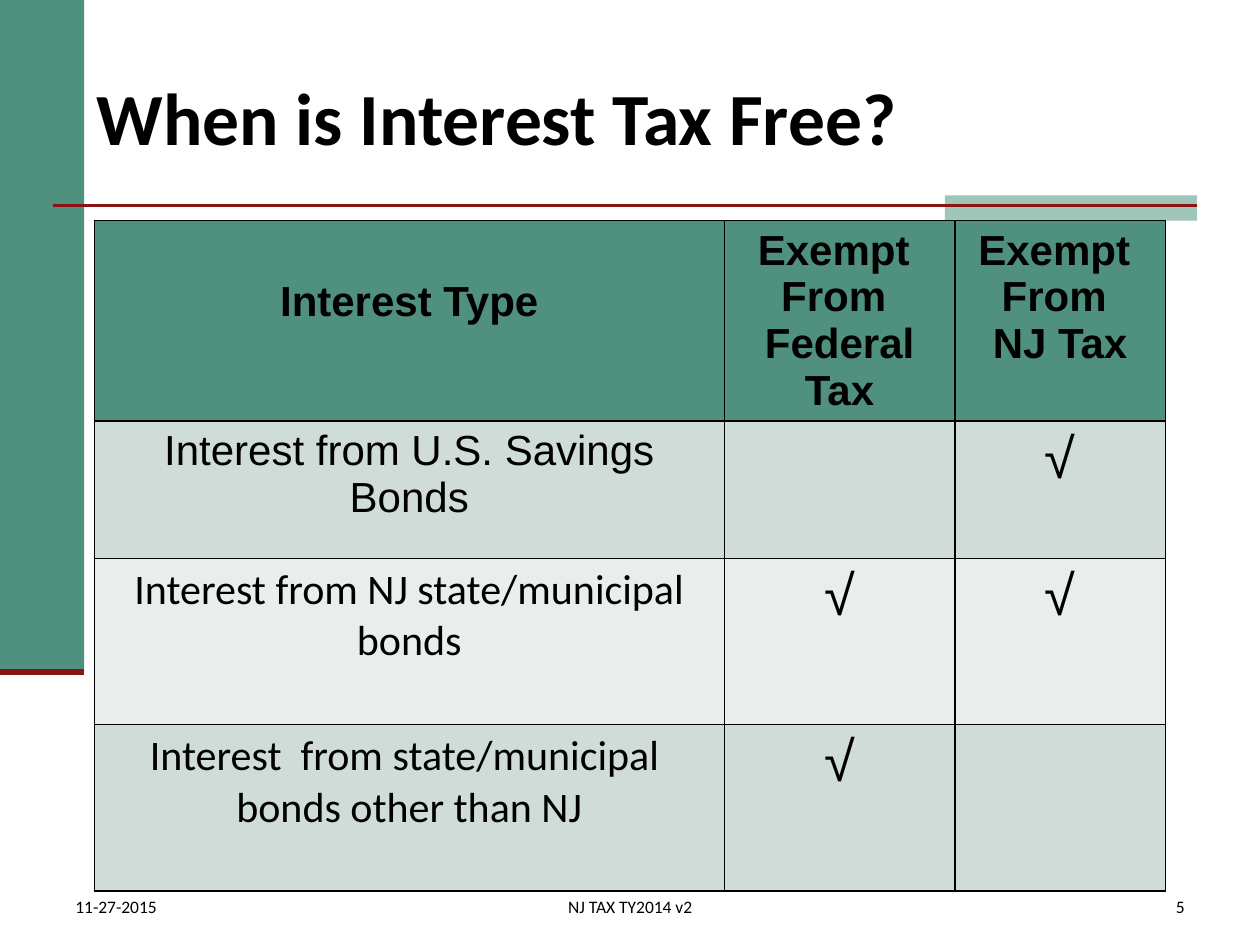
from pptx import Presentation
from pptx.dml.color import RGBColor
from pptx.enum.shapes import MSO_CONNECTOR as Connector, MSO_SHAPE as Shape
from pptx.enum.text import MSO_ANCHOR as Anchor, PP_ALIGN as Align
from pptx.oxml.ns import qn
from pptx.util import Cm, Pt
from lxml.etree import SubElement

GREEN, LIGHT_GREEN, RED, BLACK = "4F917E", "A0C6BA", "891411", "000000"
BANDS = ("D0DCD8", "E9EEEC")
HEADER = {"name": "Arial", "size": Pt(24), "bold": True}
ARIAL = {**HEADER, "bold": False}
CALIBRI = {**ARIAL, "name": "Calibri"}
CHECK = {**ARIAL, "size": Pt(32)}
TITLE = {"name": "Calibri", "size": Pt(42), "bold": True}
FOOTER = {"name": "Calibri", "size": Pt(10), "bold": False}

COLUMNS = (12.7, 4.65, 4.24)
ROWS = (4.04, 2.77, 3.35, 3.35)
HEADINGS = ("Interest Type", "Exempt \nFrom \nFederal Tax", "Exempt \nFrom \nNJ Tax")
INTERESTS = (
    ("Interest from U.S. Savings Bonds", ARIAL, "", "√"),
    ("Interest from NJ state/municipal bonds", CALIBRI, "√", "√"),
    ("Interest  from state/municipal  bonds other than NJ", CALIBRI, "√", ""),
)
FOOTERS = (
    ("11-27-2015", 1.27, 5.51, Align.LEFT),
    ("NJ TAX TY2014 v2", 8.41, 8.59, Align.CENTER),
    ("5", 18.85, 5.28, Align.RIGHT),
)


def color(value):
    """Turn a hex string into a colour."""
    return RGBColor.from_string(value)


def write(frame, text, style, align):
    """Fill a text frame with formatted paragraphs."""
    frame.text = text
    for paragraph in frame.paragraphs:
        paragraph.alignment = align
        for run in paragraph.runs:
            for name, value in style.items():
                setattr(run.font, name, value)
            run.font.color.rgb = color(BLACK)


def add_block(slide, box, fill):
    """Add a plain rectangle without outline."""
    shape = slide.shapes.add_shape(Shape.RECTANGLE, *map(Cm, box))
    shape.shadow.inherit = False
    shape.fill.solid()
    shape.fill.fore_color.rgb = color(fill)
    shape.line.fill.background()


def add_rule(slide, left, right, top, width):
    """Add a horizontal red line."""
    rule = slide.shapes.add_connector(
        Connector.STRAIGHT, Cm(left), Cm(top), Cm(right), Cm(top))
    rule.line.color.rgb = color(RED)
    rule.line.width = Pt(width)
    SubElement(rule._element.spPr, qn("a:effectLst"))


def add_title(slide, text):
    """Place and format the title placeholder."""
    title = slide.shapes.title
    box = {"left": 1.7, "top": 0.76, "width": 22.43, "height": 3.18}
    for name, value in box.items():
        setattr(title, name, Cm(value))
    title.text_frame.vertical_anchor = Anchor.MIDDLE
    write(title.text_frame, text, TITLE, Align.LEFT)


def add_footer(slide, text, left, width, align):
    """Add one small text at the bottom of the slide."""
    frame = slide.shapes.add_textbox(Cm(left), Cm(17.78), Cm(width), Cm(0.84)).text_frame
    frame.word_wrap = True
    frame.vertical_anchor = Anchor.BOTTOM
    write(frame, text, FOOTER, align)


def add_borders(cell):
    """Draw a thin black border on every side of a cell."""
    properties = cell._tc.get_or_add_tcPr()
    for index, side in enumerate(("lnL", "lnR", "lnT", "lnB")):
        line = properties.makeelement(qn(f"a:{side}"), {"w": str(Pt(1))})
        fill = SubElement(line, qn("a:solidFill"))
        SubElement(fill, qn("a:srgbClr"), val=BLACK)
        properties.insert(index, line)


def fill_cell(cell, text, style, fill):
    """Give a table cell its text, fill and borders."""
    if text:
        write(cell.text_frame, text, style, Align.CENTER)
    cell.fill.solid()
    cell.fill.fore_color.rgb = color(fill)
    add_borders(cell)


def add_interest_table(slide):
    """Add the table of exemptions by interest type."""
    table = slide.shapes.add_table(
        len(ROWS), len(COLUMNS), Cm(1.9), Cm(4.45), Cm(sum(COLUMNS)), Cm(sum(ROWS))).table
    table.horz_banding = False
    for column, width in zip(table.columns, COLUMNS):
        column.width = Cm(width)
    for row, height in zip(table.rows, ROWS):
        row.height = Cm(height)
    for index, heading in enumerate(HEADINGS):
        fill_cell(table.cell(0, index), heading, HEADER, GREEN)
    table.cell(0, 0).margin_top = Cm(1.16)
    for row, (interest, style, *checks) in enumerate(INTERESTS, 1):
        fill = BANDS[(row - 1) % 2]
        fill_cell(table.cell(row, 0), interest, style, fill)
        for column, check in enumerate(checks, 1):
            fill_cell(table.cell(row, column), check, CHECK, fill)


def main():
    """Build the slide and save it."""
    presentation = Presentation()
    presentation.slide_width, presentation.slide_height = Cm(25.4), Cm(19.05)
    slide = presentation.slides.add_slide(presentation.slide_layouts[5])
    add_block(slide, (0, 0, 1.7, 13.54), GREEN)
    add_block(slide, (19.05, 3.94, 5.08, 0.51), LIGHT_GREEN)
    add_rule(slide, 1.06, 24.13, 4.14, 1.5)
    add_rule(slide, 0, 1.7, 13.54, 3.5)
    add_title(slide, "When is Interest Tax Free?")
    add_interest_table(slide)
    for footer in FOOTERS:
        add_footer(slide, *footer)
    presentation.save("out.pptx")


if __name__ == "__main__":
    main()
